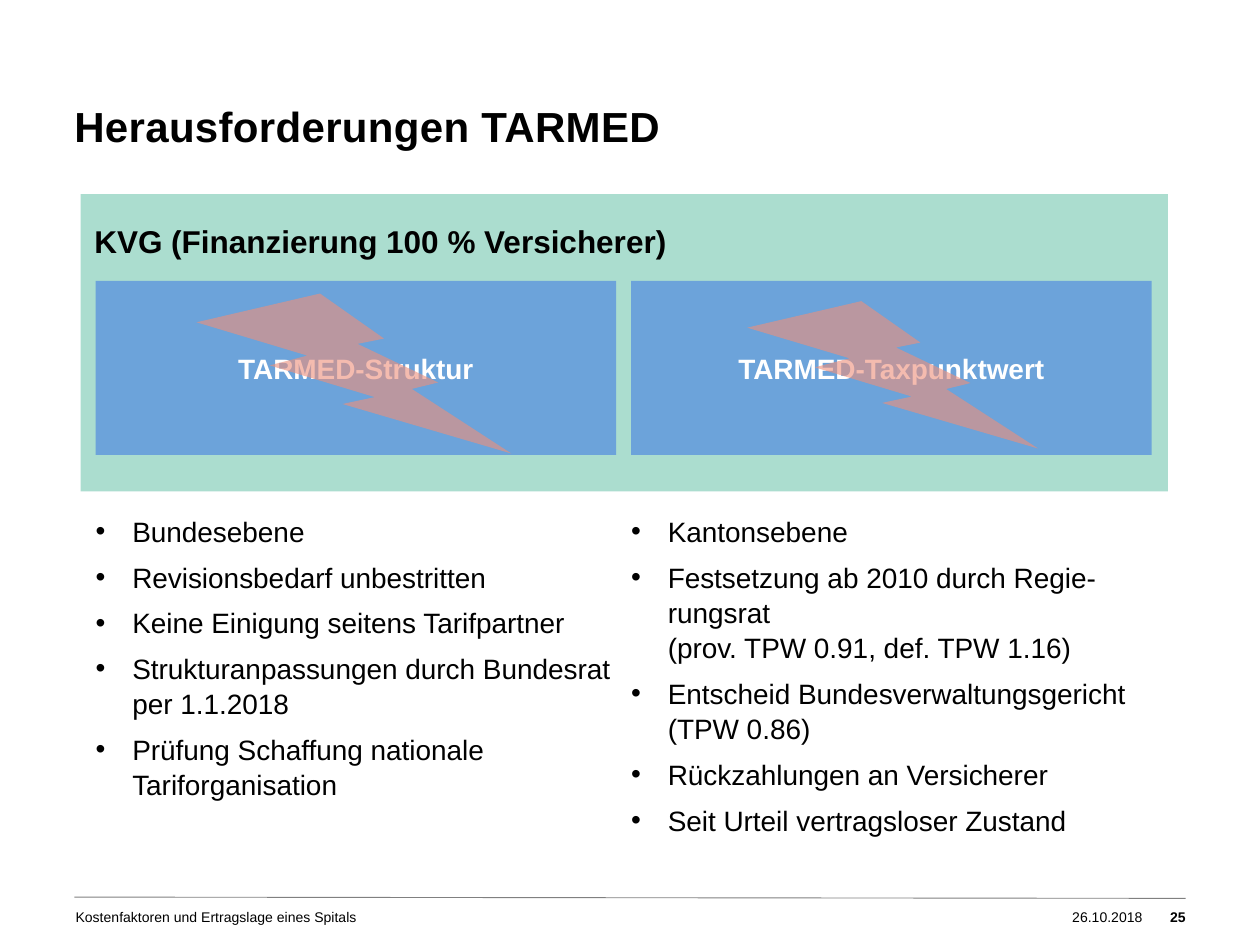
from dataclasses import dataclass

import lxml.etree
import pptx
import pptx.dml.color
import pptx.enum.shapes
import pptx.enum.text
import pptx.oxml.ns
import pptx.util

Inches = pptx.util.Inches
Pt = pptx.util.Pt
Align = pptx.enum.text.PP_ALIGN
Anchor = pptx.enum.text.MSO_ANCHOR
Preset = pptx.enum.shapes.MSO_SHAPE
qn = pptx.oxml.ns.qn

COLORS = {
    "black": "000000",
    "white": "FFFFFF",
    "rule": "808080",
    "frame": "009870",
    "panel": "6CA3DA",
    "bolt": "EE8F7A",
}
FONT = "Arial"


@dataclass
class Box:
    left: float
    top: float
    width: float
    height: float

    def lengths(self) -> list:
        return [Inches(v) for v in (self.left, self.top, self.width, self.height)]


@dataclass
class Column:
    left: float
    heading: str
    bolt: Box
    points: list[str]


COLUMN_WIDTH = 4.13
COLUMNS = [
    Column(0.76, "TARMED-Struktur", Box(1.56, 2.33, 2.5, 1.27), [
        "Bundesebene",
        "Revisionsbedarf unbestritten",
        "Keine Einigung seitens Tarifpartner",
        "Strukturanpassungen durch Bundesrat per 1.1.2018",
        "Prüfung Schaffung nationale Tariforganisation",
    ]),
    Column(5.01, "TARMED-Taxpunktwert", Box(5.93, 2.39, 2.31, 1.17), [
        "Kantonsebene",
        "Festsetzung ab 2010 durch Regie-rungsrat\v(prov. TPW 0.91, def. TPW 1.16)",
        "Entscheid Bundesverwaltungsgericht\v(TPW 0.86)",
        "Rückzahlungen an Versicherer",
        "Seit Urteil vertragsloser Zustand",
    ]),
]


def rgb(name: str) -> pptx.dml.color.RGBColor:
    return pptx.dml.color.RGBColor.from_string(COLORS[name])


def style_runs(paragraph, size: float, color: str = "black", bold: bool = False) -> None:
    for run in paragraph.runs:
        run.font.name = FONT
        run.font.size = Pt(size)
        run.font.bold = bold
        run.font.color.rgb = rgb(color)


def add_shape(slide, preset, box: Box, color: str, opacity: int = 100):
    shape = slide.shapes.add_shape(preset, *box.lengths())
    shape.shadow.inherit = False
    shape.line.fill.background()
    shape.fill.solid()
    shape.fill.fore_color.rgb = rgb(color)
    if opacity < 100:
        color_element = shape.fill._xPr.find(".//" + qn("a:srgbClr"))
        alpha = lxml.etree.SubElement(color_element, qn("a:alpha"))
        alpha.set("val", str(opacity * 1000))
    return shape


def add_text_box(slide, box: Box, inset: bool = False, wrap: bool = True):
    frame = slide.shapes.add_textbox(*box.lengths()).text_frame
    frame.word_wrap = wrap
    if not inset:
        frame.margin_left = frame.margin_right = Inches(0)
        frame.margin_top = frame.margin_bottom = Inches(0)
    return frame


def add_label(slide, box: Box, text: str, size: float, bold: bool = False,
              align=Align.LEFT, inset: bool = False, wrap: bool = True):
    frame = add_text_box(slide, box, inset, wrap)
    frame.text = text
    paragraph = frame.paragraphs[0]
    paragraph.alignment = align
    style_runs(paragraph, size, bold=bold)
    return paragraph


def add_bullets(slide, box: Box, points: list[str]) -> None:
    frame = add_text_box(slide, box)
    for index, point in enumerate(points):
        paragraph = frame.paragraphs[0] if index == 0 else frame.add_paragraph()
        paragraph.text = point
        paragraph.line_spacing = 1.05
        if index:
            paragraph.space_before = Pt(6)
        properties = paragraph._p.get_or_add_pPr()
        properties.set("marL", str(Inches(0.29)))
        properties.set("indent", str(-Inches(0.29)))
        lxml.etree.SubElement(properties, qn("a:buFont")).set("typeface", FONT)
        lxml.etree.SubElement(properties, qn("a:buChar")).set("char", "•")
        style_runs(paragraph, 16)


def add_panel(slide, box: Box, heading: str) -> None:
    frame = add_shape(slide, Preset.RECTANGLE, box, "panel").text_frame
    frame.text = heading
    frame.word_wrap = True
    frame.vertical_anchor = Anchor.MIDDLE
    frame.paragraphs[0].alignment = Align.CENTER
    style_runs(frame.paragraphs[0], 16, "white", bold=True)


def add_footer(slide) -> None:
    rule = slide.shapes.add_connector(
        pptx.enum.shapes.MSO_CONNECTOR.STRAIGHT,
        Inches(0.59), Inches(7.12), Inches(9.41), Inches(7.13))
    rule.line.color.rgb = rgb("rule")
    rule.line.width = Pt(0.5)
    lxml.etree.SubElement(rule._element.spPr, qn("a:effectLst"))
    add_label(slide, Box(0.6, 7.21, 7.17, 0.28),
              "Kostenfaktoren und Ertragslage eines Spitals", 8, wrap=False)
    add_label(slide, Box(8.51, 7.21, 0.71, 0.28), "26.10.2018", 8, wrap=False)
    # Right-aligned page number
    add_label(slide, Box(9.14, 7.21, 0.27, 0.28), "25", 8, bold=True, align=Align.RIGHT)


def main() -> None:
    presentation = pptx.Presentation()
    presentation.slide_width = Inches(10)
    presentation.slide_height = Inches(7.5)
    slide = presentation.slides.add_slide(presentation.slide_layouts[6])

    add_footer(slide)

    # Title with slightly widened letters
    title = add_label(slide, Box(0.59, 0.8, 8.82, 0.87),
                      "Herausforderungen TARMED", 24, bold=True)
    title.runs[0].font._element.set("spc", "20")

    # Financing frame with its two panels
    add_shape(slide, Preset.RECTANGLE, Box(0.64, 1.54, 8.63, 2.36), "frame", opacity=33)
    for column in COLUMNS:
        add_panel(slide, Box(column.left, 2.23, COLUMN_WIDTH, 1.38), column.heading)
    add_label(slide, Box(0.65, 1.71, 7.78, 0.4),
              "KVG (Finanzierung 100 % Versicherer)", 18, bold=True, inset=True)

    # Lightning bolts over the panels, bullet lists below
    for column in COLUMNS:
        add_shape(slide, Preset.LIGHTNING_BOLT, column.bolt, "bolt", opacity=60)
        add_bullets(slide, Box(column.left, 4.07, COLUMN_WIDTH, 2.83), column.points)

    presentation.save("out.pptx")


if __name__ == "__main__":
    main()
